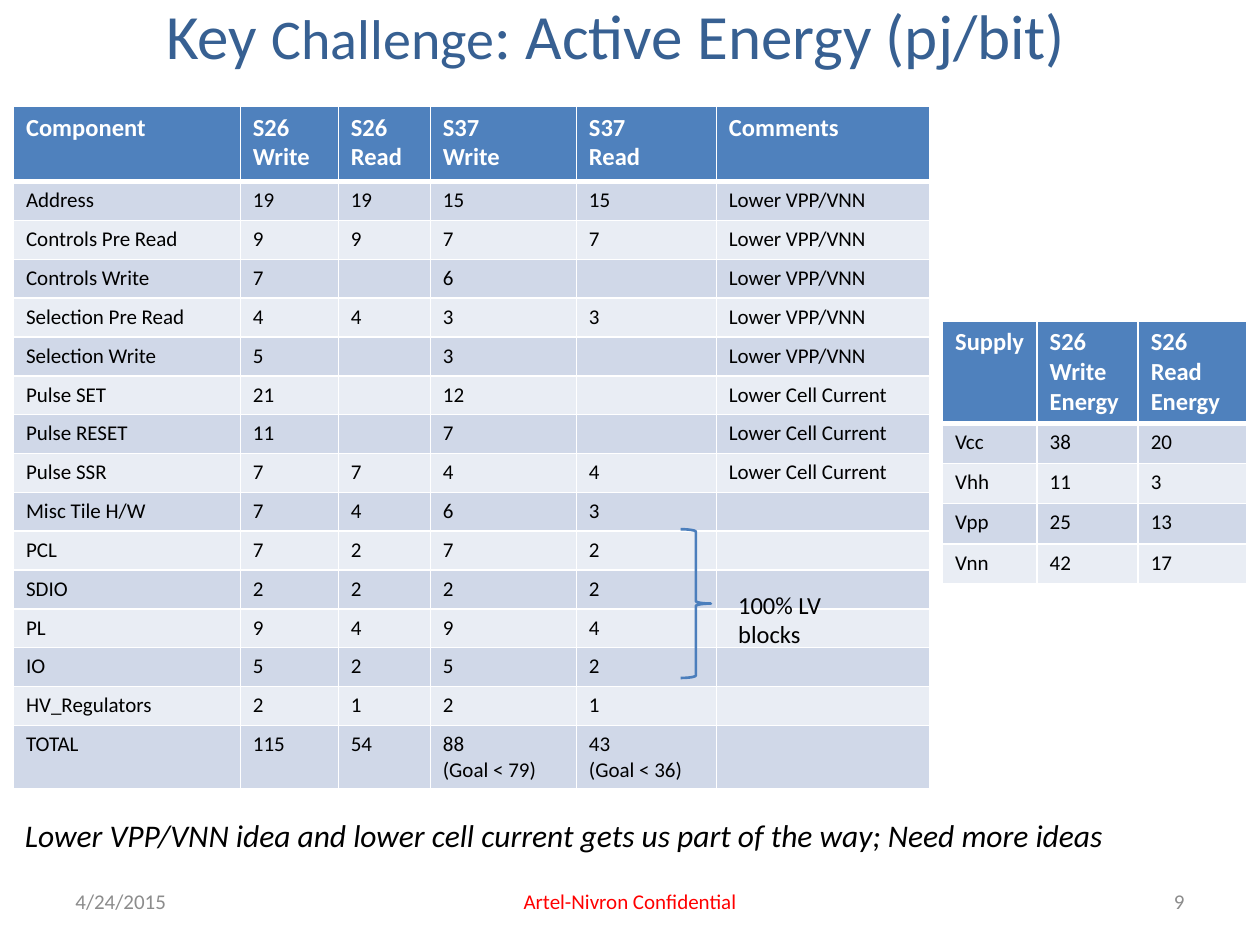
"""Build the active energy slide with its component and supply tables."""
from lxml import etree
from pptx import Presentation
from pptx import util as u
from pptx.dml.color import RGBColor
from pptx.enum import shapes, text
from pptx.oxml.ns import qn

Pt = u.Pt
COLORS = {
    "title": "376092", "header": "4F81BD", "odd": "D0D8E8", "even": "E9EDF4",
    "white": "FFFFFF", "black": "000000", "gray": "8C8C8C", "red": "FF0000",
    "brace": "4B7EBC",
}
LEFT, CENTER, RIGHT = text.PP_ALIGN.LEFT, text.PP_ALIGN.CENTER, text.PP_ALIGN.RIGHT
TOP, MIDDLE, BOTTOM = text.MSO_ANCHOR.TOP, text.MSO_ANCHOR.MIDDLE, text.MSO_ANCHOR.BOTTOM


def style(span, size, color, bold=False, italic=False):
    span.font.name = "Calibri"
    span.font.size = Pt(size)
    span.font.bold = bold
    span.font.italic = italic
    span.font.color.rgb = RGBColor.from_string(COLORS[color])


def add_grid(page, left, top, widths, heights, rows):
    frame = page.shapes.add_table(len(rows), len(widths), Pt(left), Pt(top),
                                  Pt(sum(widths)), Pt(sum(heights)))
    grid = frame.table
    for column, width in zip(grid.columns, widths):
        column.width = Pt(width)
    for index, (row, height, values) in enumerate(zip(grid.rows, heights, rows)):
        row.height = Pt(height)
        head = index == 0
        size = 14 if head else 12
        fill = "header" if head else ("odd" if index % 2 else "even")
        borders = {"L": 1, "R": 1, "T": 3 if index == 1 else 1, "B": 3 if head else 1}
        for cell, value in zip(row.cells, values):
            props = cell._tc.get_or_add_tcPr()
            for side, width in borders.items():
                line = etree.SubElement(props, qn(f"a:ln{side}"), w=str(Pt(width)))
                solid = etree.SubElement(line, qn("a:solidFill"))
                etree.SubElement(solid, qn("a:srgbClr"), val=COLORS["white"])
            cell.fill.solid()
            cell.fill.fore_color.rgb = RGBColor.from_string(COLORS[fill])
            cell.text_frame.text = value
            for para in cell.text_frame.paragraphs:
                for span in para.runs:
                    style(span, size, "white" if head else "black", bold=head)
                etree.SubElement(para._p, qn("a:endParaRPr"), sz=str(size * 100))


deck = Presentation()
deck.slide_width, deck.slide_height = Pt(720), Pt(540)
page = deck.slides.add_slide(deck.slide_layouts[6])

title = page.shapes.add_textbox(Pt(28), Pt(7.2), Pt(648), Pt(25.2))
title.text_frame.word_wrap = True
title.text_frame.vertical_anchor = MIDDLE
para = title.text_frame.paragraphs[0]
para.alignment = CENTER
for words, size in [("Key ", 36), ("Challenge", 32), (": Active Energy (pj/bit)", 36)]:
    span = para.add_run()
    span.text = words
    style(span, size, "title")

voltage, current = "Lower VPP/VNN", "Lower Cell Current"
components = [
    ("Component", "S26\nWrite", "S26\nRead", "S37\nWrite", "S37\nRead", "Comments"),
    ("Address", "19", "19", "15", "15", voltage),
    ("Controls Pre Read", "9", "9", "7", "7", voltage),
    ("Controls Write", "7", "", "6", "", voltage),
    ("Selection Pre Read", "4", "4", "3", "3", voltage),
    ("Selection Write", "5", "", "3", "", voltage),
    ("Pulse SET", "21", "", "12", "", current),
    ("Pulse RESET", "11", "", "7", "", current),
    ("Pulse SSR", "7", "7", "4", "4", current),
    ("Misc Tile H/W", "7", "4", "6", "3", ""),
    ("PCL", "7", "2", "7", "2", ""),
    ("SDIO", "2", "2", "2", "2", ""),
    ("PL", "9", "4", "9", "4", ""),
    ("IO", "5", "2", "5", "2", ""),
    ("HV_Regulators", "2", "1", "2", "1", ""),
    ("TOTAL", "115", "54", "88\n(Goal < 79)", "43\n(Goal < 36)", ""),
]
add_grid(page, 7.7, 60.8, [129.6, 56, 52.6, 83.5, 80, 121.7],
         [43] + [22.2] * 14 + [36.5], components)

supplies = [
    ("Supply", "S26 Write Energy", "S26 Read Energy"),
    ("Vcc", "38", "20"),
    ("Vhh", "11", "3"),
    ("Vpp", "25", "13"),
    ("Vnn", "42", "17"),
]
add_grid(page, 538.6, 183.4, [54, 57.8, 61.8], [58.5] + [23] * 4, supplies)

brace = page.shapes.add_shape(shapes.MSO_SHAPE.RIGHT_BRACE,
                              Pt(389), Pt(302.4), Pt(17.3), Pt(85))
brace.shadow.inherit = False
brace.fill.background()
brace.line.color.rgb = RGBColor.from_string(COLORS["brace"])
brace.line.width = Pt(1.5)

labels = [
    ("100% LV blocks", 414.7, 316, 90, 58.3, 14, "black", LEFT, BOTTOM, False),
    ("Lower VPP/VNN idea and lower cell current gets us part of the way; "
     "Need more ideas", 7.2, 463, 640, 28.8, 18, "black", LEFT, TOP, True),
    ("4/24/2015", 36, 500.4, 168, 28.8, 12, "gray", LEFT, MIDDLE, False),
    ("Artel-Nivron Confidential", 246, 500.4, 228, 28.8, 12, "red", CENTER, MIDDLE, False),
    ("9", 516, 500.4, 168, 28.8, 12, "gray", RIGHT, MIDDLE, False),
]
for words, left, top, width, height, size, color, align, anchor, italic in labels:
    box = page.shapes.add_textbox(Pt(left), Pt(top), Pt(width), Pt(height))
    box.text_frame.word_wrap = True
    box.text_frame.vertical_anchor = anchor
    box.text_frame.text = words
    para = box.text_frame.paragraphs[0]
    para.alignment = align
    style(para.runs[0], size, color, italic=italic)

deck.save("out.pptx")
